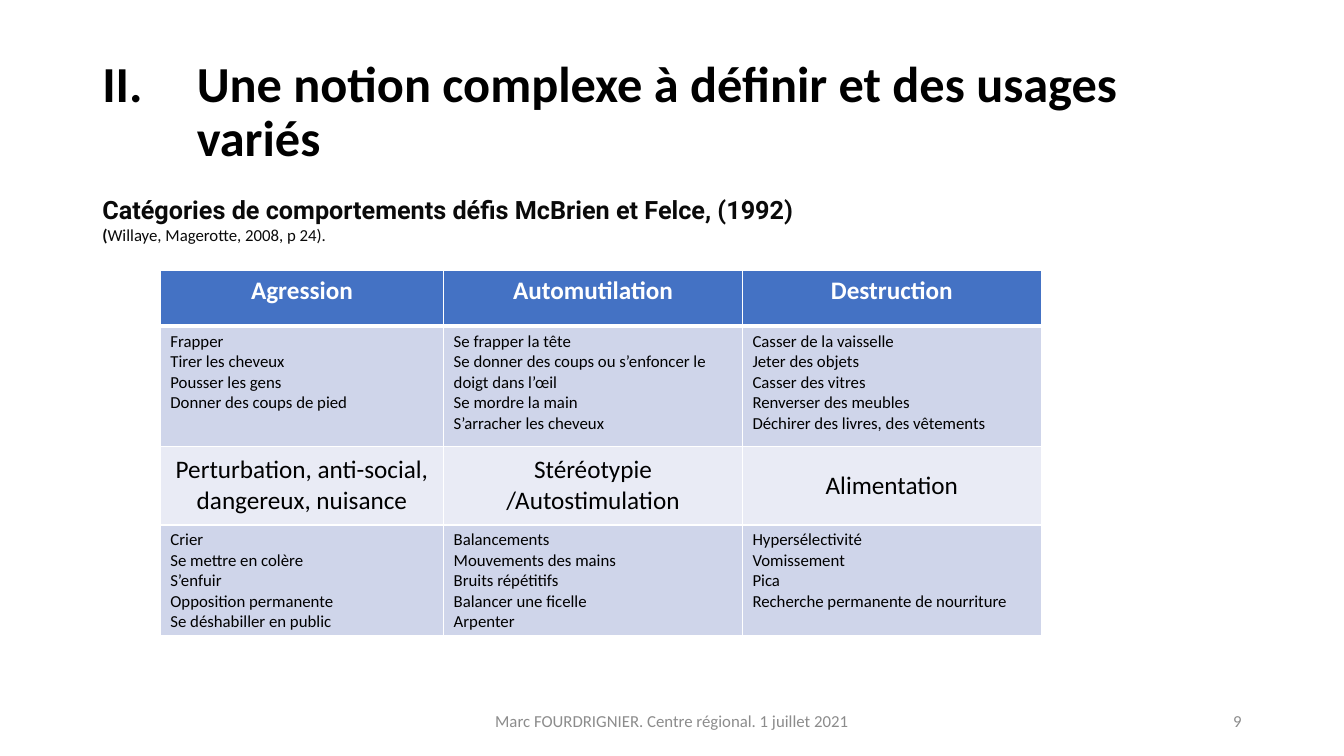
from lxml.etree import SubElement
from pptx import Presentation
from pptx.dml.color import RGBColor
from pptx.enum.text import MSO_ANCHOR, PP_ALIGN
from pptx.oxml.ns import qn
from pptx.util import Cm, Pt


def style(font, size, color, bold=False, name="Calibri"):
    font.name = name
    font.size = Pt(size)
    font.bold = bold
    font.color.rgb = RGBColor.from_string(color)


def add_text(left, top, width, height, text, anchor=MSO_ANCHOR.MIDDLE):
    """Add a wrapping text box and return its text frame."""
    box = page.shapes.add_textbox(Cm(left), Cm(top), Cm(width), Cm(height))
    frame = box.text_frame
    frame.word_wrap = True
    frame.vertical_anchor = anchor
    frame.text = text
    return frame


deck = Presentation()
deck.slide_width = Cm(33.87)
deck.slide_height = Cm(19.05)
page = deck.slides.add_slide(deck.slide_layouts[6])

# Numbered title with a hanging indent
title = add_text(2.33, 1.01, 29.21, 3.68,
                 "Une notion complexe à définir et des usages variés")
para = title.paragraphs[0]
para.line_spacing = 0.9
style(para.font, 36, "000000", bold=True)
properties = para._p.get_or_add_pPr()
properties.set("marL", str(Cm(2.38)))
properties.set("indent", str(Cm(-2.38)))
numbering = properties.makeelement(qn("a:buAutoNum"), type="romanUcPeriod", startAt="2")
properties.find(qn("a:lnSpc")).addnext(numbering)

# Subtitle and its reference
subtitle = add_text(2.33, 4.77, 26.82, 1.55,
                    "Catégories de comportements défis McBrien et Felce, (1992)",
                    MSO_ANCHOR.TOP)
style(subtitle.paragraphs[0].font, 18, "0A0A0A", bold=True, name="Roboto")
reference = subtitle.add_paragraph()
for text, bold in (("(", True), ("Willaye, Magerotte, 2008, p 24).", False)):
    span = reference.add_run()
    span.text = text
    style(span.font, 12, "0A0A0A", bold)

# Table of behaviour categories: heading rows alternate with example rows
rows = [
    ["Agression", "Automutilation", "Destruction"],
    ["Frapper\nTirer les cheveux\nPousser les gens\nDonner des coups de pied",
     "Se frapper la tête\nSe donner des coups ou s’enfoncer le doigt dans l’œil\n"
     "Se mordre la main\nS’arracher les cheveux",
     "Casser de la vaisselle\nJeter des objets\nCasser des vitres\n"
     "Renverser des meubles\nDéchirer des livres, des vêtements"],
    ["Perturbation, anti-social, dangereux, nuisance",
     "Stéréotypie /Autostimulation", "Alimentation"],
    ["Crier\nSe mettre en colère\nS’enfuir\nOpposition permanente\n"
     "Se déshabiller en public",
     "Balancements\nMouvements des mains\nBruits répétitifs\n"
     "Balancer une ficelle\nArpenter",
     "Hypersélectivité\nVomissement\nPica\nRecherche permanente de nourriture"],
]
widths = [7.14, 7.53, 7.53]
heights = [1.4, 3.03, 1.98, 2.8]
fills = ["4472C4", "CFD5EA", "E9EBF5", "CFD5EA"]

table = page.shapes.add_table(len(rows), len(widths), Cm(4.04), Cm(6.82),
                              Cm(sum(widths)), Cm(sum(heights))).table
for column, width in zip(table.columns, widths):
    column.width = Cm(width)

for r, texts in enumerate(rows):
    table.rows[r].height = Cm(heights[r])
    is_header = r == 0
    is_heading = r % 2 == 0
    for c, text in enumerate(texts):
        cell = table.cell(r, c)
        cell.text = text
        cell.vertical_anchor = MSO_ANCHOR.MIDDLE if r == 2 else MSO_ANCHOR.TOP
        for para in cell.text_frame.paragraphs:
            para.alignment = PP_ALIGN.CENTER if is_heading else PP_ALIGN.LEFT
            style(para.font, 18 if is_heading else 12,
                  "FFFFFF" if is_header else "000000", is_header)

        # Borders come before the fill in the cell properties
        borders = cell._tc.get_or_add_tcPr()
        for side in ("lnL", "lnR", "lnT", "lnB"):
            thick = (r, side) in ((0, "lnB"), (1, "lnT"))
            line = SubElement(borders, qn(f"a:{side}"), w=str(Pt(3 if thick else 1)))
            paint = SubElement(line, qn("a:solidFill"))
            SubElement(paint, qn("a:srgbClr"), val="FFFFFF")
        cell.fill.solid()
        cell.fill.fore_color.rgb = RGBColor.from_string(fills[r])

# Footer and page number
for left, width, text, alignment in (
        (11.22, 11.43, "Marc FOURDRIGNIER. Centre régional. 1 juillet 2021", PP_ALIGN.CENTER),
        (23.92, 7.62, "9", PP_ALIGN.RIGHT)):
    para = add_text(left, 17.65, width, 1.02, text).paragraphs[0]
    para.alignment = alignment
    style(para.font, 12, "8C8C8C")

deck.save("out.pptx")
